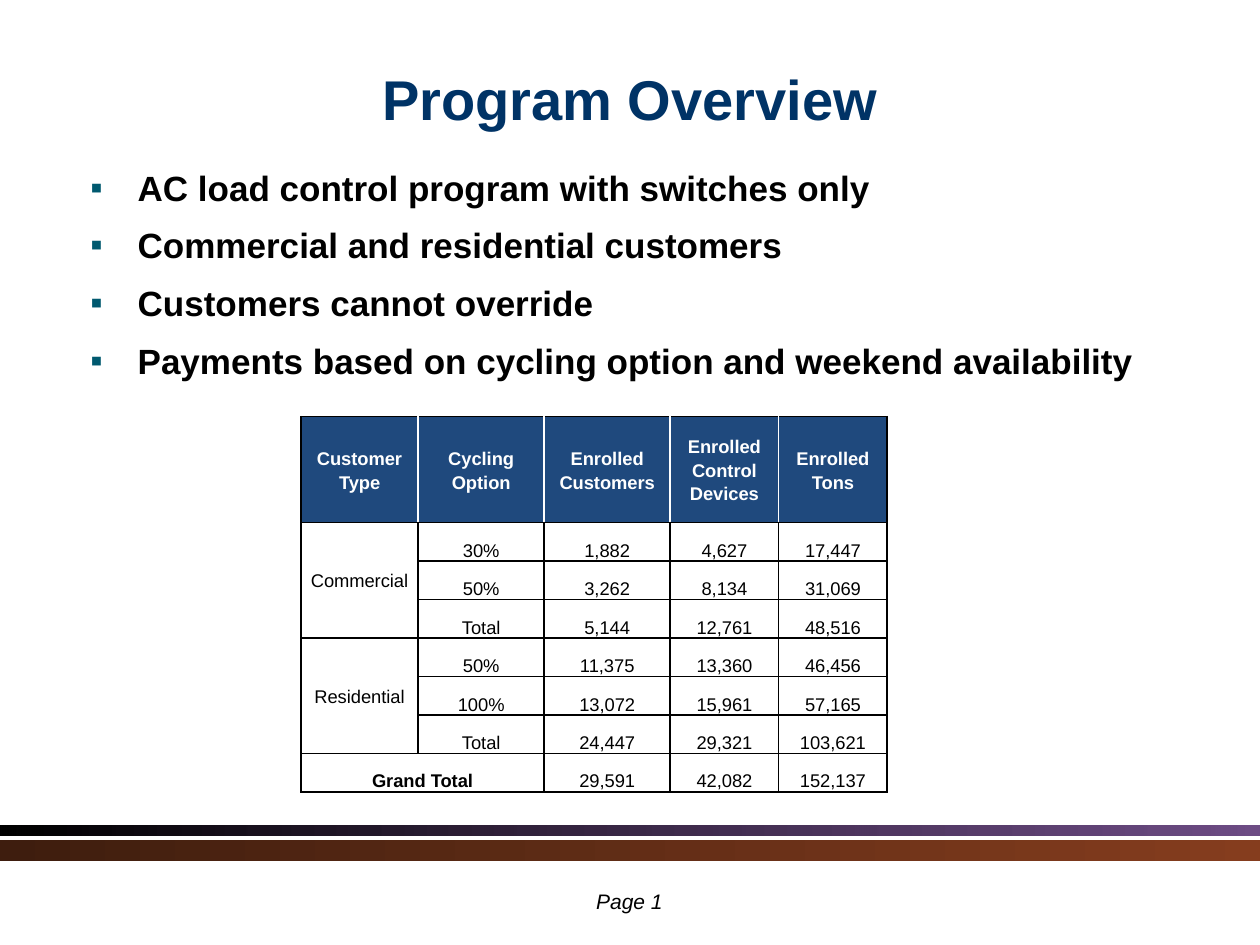
from lxml import etree
from pptx import Presentation
from pptx import util as u
from pptx.dml.color import RGBColor
from pptx.enum import shapes, text
from pptx.oxml.ns import qn

MID, LOW = text.MSO_ANCHOR.MIDDLE, text.MSO_ANCHOR.BOTTOM
CENTER = text.PP_ALIGN.CENTER


def rgb(code):
    return RGBColor.from_string(code)


def box(*sides):
    return [u.Pt(side) for side in sides]


def put(item, values):
    for name, value in values.items():
        setattr(item, name, value)


def sub(parent, tag, **attrs):
    return etree.SubElement(parent, qn(tag), attrs)


class Deck:
    face, ink, navy, teal = "Arial", "000000", "003366", "00596F"
    head, white = "1F497D", "FFFFFF"

    def __init__(self, wide, high):
        self.show = Presentation()
        self.show.slide_width, self.show.slide_height = box(wide, high)
        self.slide = self.show.slides.add_slide(self.show.slide_layouts[5])

    def style(self, para, size, color, bold=False, italic=False, **form):
        put(para, form)
        put(para.font, dict(name=self.face, size=u.Pt(size), bold=bold, italic=italic))
        para.font.color.rgb = rgb(color)

    def title(self, words, place):
        shape = self.slide.shapes.title
        put(shape, dict(zip(("left", "top", "width", "height"), box(*place))))
        frame = shape.text_frame
        frame.text = words
        frame.vertical_anchor = MID
        self.style(frame.paragraphs[0], 32, self.navy, bold=True, alignment=CENTER)

    def band(self, place, start, end, alpha=100):
        shape = self.slide.shapes.add_shape(shapes.MSO_SHAPE.RECTANGLE, *box(*place))
        shape.shadow.inherit = False
        shape.line.fill.background()
        shape.fill.gradient()
        shape.fill.gradient_angle = 0
        for stop, color in zip(shape.fill.gradient_stops, (start, end)):
            stop.color.rgb = rgb(color)
        if alpha < 100:
            last = list(shape._element.spPr.iter(qn("a:srgbClr")))[-1]
            sub(last, "a:alpha", val=str(alpha * 1000))

    def frame(self, place):
        frame = self.slide.shapes.add_textbox(*box(*place)).text_frame
        frame.word_wrap = True
        return frame

    def label(self, words, place):
        para = self.frame(place).paragraphs[0]
        para.text = words
        self.style(para, 12, self.ink, italic=True, alignment=CENTER)

    def bullets(self, lines, place, indent=27):
        frame = self.frame(place)
        for i, line in enumerate(lines):
            para = frame.add_paragraph() if i else frame.paragraphs[0]
            para.text = line
            props = para._p.get_or_add_pPr()
            props.set("marL", str(u.Pt(indent)))
            props.set("indent", str(-u.Pt(indent)))
            sub(sub(props, "a:buClr"), "a:srgbClr", val=self.teal)
            sub(props, "a:buFont", typeface=self.face)
            sub(props, "a:buChar", char="▪")
            self.style(para, 20, self.ink, bold=True, space_before=u.Pt(9 if i else 0))

    def edges(self, cell, colors):
        props = cell._tc.get_or_add_tcPr()
        for i, (side, color) in enumerate(zip("LRTB", colors)):
            line = etree.Element(qn("a:ln" + side), w=str(u.Pt(1)))
            sub(sub(line, "a:solidFill"), "a:srgbClr", val=color)
            props.insert(i, line)

    def cell(self, cell, words, top, anchor, bold, left, right):
        put(cell, dict(text=words, vertical_anchor=anchor, margin_left=u.Pt(5),
                       margin_right=u.Pt(5), margin_top=0, margin_bottom=0))
        gap = u.Pt(5 if top else 3)
        self.style(cell.text_frame.paragraphs[0], 10.5, self.white if top else self.ink,
                   bold=bold, alignment=CENTER, line_spacing=1.15,
                   space_before=gap, space_after=gap)
        self.edges(cell, (left, right, self.ink, self.ink))
        if top:
            cell.fill.solid()
            cell.fill.fore_color.rgb = rgb(self.head)
        else:
            cell.fill.background()

    def table(self, rows, merges, widths, heights, left, top):
        place = box(left, top, sum(widths), sum(heights))
        grid = self.slide.shapes.add_table(len(rows), len(widths), *place).table
        for col, width in zip(grid.columns, widths):
            col.width = u.Pt(width)
        for row, height in zip(grid.rows, heights):
            row.height = u.Pt(height)
        last = len(widths) - 1
        for r, row in enumerate(rows):
            for c, words in enumerate(row):
                grand = r == len(rows) - 1
                inner = self.ink if r else self.white
                self.cell(grid.cell(r, c), words, r == 0,
                          MID if r == 0 or (c == 0 and not grand) else LOW,
                          r == 0 or (grand and c == 0),
                          inner if c else self.ink, inner if c < last else self.ink)
        for start, end in merges:
            grid.cell(*start).merge(grid.cell(*end))


def main():
    deck = Deck(720, 540)

    # Footer bands
    deck.band((0, 471.6, 720, 6), "000000", "542D6F", alpha=85)
    deck.band((0, 480.2, 720, 12), "3E1D0E", "853D1E")

    # Title and key points
    deck.title("Program Overview", (36, 21.6, 648, 68.4))
    deck.bullets(["AC load control program with switches only",
                  "Commercial and residential customers",
                  "Customers cannot override",
                  "Payments based on cycling option and weekend availability"],
                 (44.6, 91.4, 648, 127.4))
    deck.label("Page 1", (283, 504, 153.4, 15.8))

    # Enrollment table
    rows = [
        ("Customer Type", "Cycling Option", "Enrolled Customers",
         "Enrolled Control Devices", "Enrolled Tons"),
        ("Commercial", "30%", "1,882", "4,627", "17,447"),
        ("", "50%", "3,262", "8,134", "31,069"),
        ("", "Total", "5,144", "12,761", "48,516"),
        ("Residential", "50%", "11,375", "13,360", "46,456"),
        ("", "100%", "13,072", "15,961", "57,165"),
        ("", "Total", "24,447", "29,321", "103,621"),
        ("Grand Total", "", "29,591", "42,082", "152,137"),
    ]
    merges = [((1, 0), (3, 0)), ((4, 0), (6, 0)), ((7, 0), (7, 1))]
    deck.table(rows, merges, (67, 72, 72, 62, 62), [60.5] + [22] * 7, 172, 238)

    deck.show.save("out.pptx")


if __name__ == "__main__":
    main()
